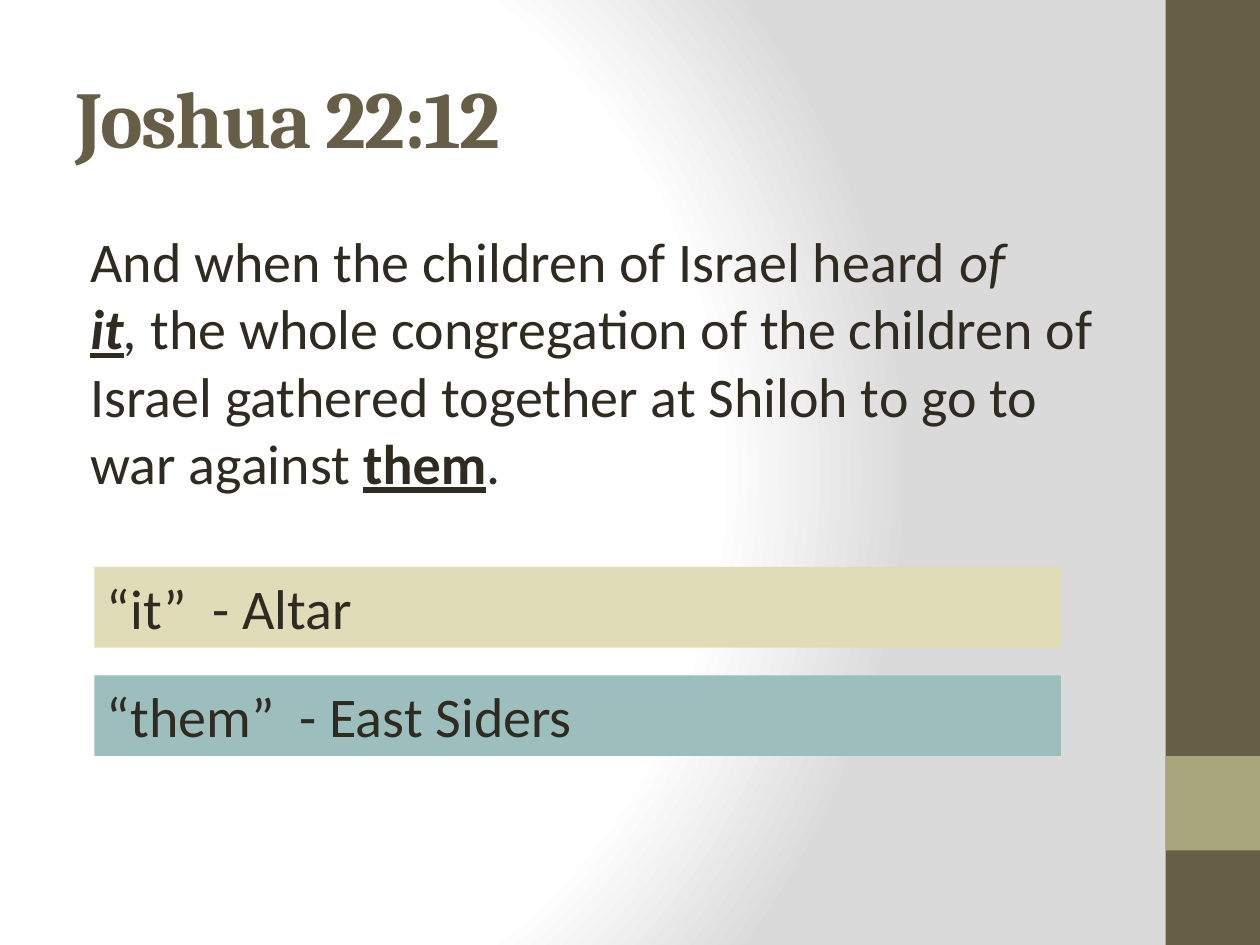
"""Build the Joshua 22:12 scripture slide."""
from dataclasses import dataclass

from pptx import Presentation
from pptx.dml.color import RGBColor
from pptx.enum.shapes import MSO_SHAPE as Preset
from pptx.enum.text import MSO_ANCHOR as Anchor, PP_ALIGN as Align
from pptx.oxml import parse_xml
from pptx.oxml.ns import nsdecls
from pptx.util import Inches, Pt

COLORS = {
    "brown": "675E47",
    "olive": "A9A57C",
    "ink": "2F2B20",
    "sand": "DFDCB7",
    "teal": "9CBEBD",
    "white": "FFFFFF",
    "gray": "DADADA",
}


@dataclass
class Span:
    """A stretch of text with its own emphasis."""
    text: str
    bold: bool = False
    italic: bool = False
    underline: bool = False


@dataclass
class Band:
    """A filled rectangle, measured in inches."""
    left: float
    top: float
    width: float
    height: float
    color: str
    text: str = ""


VERSE = [
    Span("And when the children of Israel heard\u00a0"),
    Span("of", italic=True),
    Span(" it", bold=True, italic=True, underline=True),
    Span(",", italic=True),
    Span("\u00a0the whole congregation of the children of Israel gathered "
         "together at Shiloh to go to war against "),
    Span("them", bold=True, underline=True),
    Span("."),
]
SIDEBAR = [
    Band(9.25, 0, 0.75, 7.5, "brown"),
    Band(9.25, 6, 0.75, 0.75, "olive"),
]
MEANINGS = [
    Band(0.75, 4.5, 7.67, 0.64, "sand", "“it”  - Altar"),
    Band(0.75, 5.36, 7.67, 0.64, "teal", "“them”  - East Siders"),
]


def write(box, spans: list[Span], *, size: float = 32, font: str = "Calibri",
          color: str = "ink", anchor=Anchor.TOP, indent: float = 0,
          tracking: int = 0) -> None:
    """Fill a box with one left-aligned paragraph of formatted spans."""
    frame = box.text_frame
    frame.word_wrap = True
    frame.vertical_anchor = anchor
    para = frame.paragraphs[0]
    para.alignment = Align.LEFT
    if indent:
        para._p.get_or_add_pPr().set("marL", str(Inches(indent)))
    for span in spans:
        run = para.add_run()
        run.text = span.text
        run.font.size = Pt(size)
        run.font.name = font
        run.font.bold = span.bold
        run.font.italic = span.italic
        run.font.underline = span.underline
        run.font.color.rgb = RGBColor.from_string(COLORS[color])
        if tracking:
            run.font._element.set("spc", str(tracking))


def add_band(page, band: Band) -> None:
    """Draw a flat rectangle and its text, if any."""
    box = page.shapes.add_shape(
        Preset.RECTANGLE, Inches(band.left), Inches(band.top),
        Inches(band.width), Inches(band.height))
    box.shadow.inherit = False
    box.fill.solid()
    box.fill.fore_color.rgb = RGBColor.from_string(COLORS[band.color])
    box.line.fill.background()
    if band.text:
        write(box, [Span(band.text)])


def add_text(page, top: float, height: float, spans: list[Span], **style) -> None:
    """Place a text box in the main column."""
    box = page.shapes.add_textbox(
        Inches(0.5), Inches(top), Inches(8.33), Inches(height))
    write(box, spans, **style)


def set_background(page) -> None:
    """Give the page a circular white-to-gray gradient."""
    stops = "".join(
        f'<a:gs pos="{place * 1000}"><a:srgbClr val="{COLORS[color]}"/></a:gs>'
        for place, color in ((0, "white"), (75, "white"), (100, "gray")))
    page.element.cSld.insert(0, parse_xml(
        f'<p:bg {nsdecls("p", "a")}><p:bgPr><a:gradFill rotWithShape="1">'
        f'<a:gsLst>{stops}</a:gsLst><a:path path="circle">'
        '<a:fillToRect l="20000" t="50000" r="100000" b="50000"/></a:path>'
        '</a:gradFill><a:effectLst/></p:bgPr></p:bg>'))


def main() -> None:
    """Compose and save the deck."""
    deck = Presentation()
    deck.slide_width, deck.slide_height = Inches(10), Inches(7.5)
    page = deck.slides.add_slide(deck.slide_layouts[6])
    set_background(page)
    for band in SIDEBAR:
        add_band(page, band)
    add_text(page, 0.3, 1.25, [Span("Joshua 22:12", bold=True)], size=46,
             font="Cambria", color="brown", anchor=Anchor.MIDDLE, tracking=-100)
    add_text(page, 1.75, 2.5, VERSE, indent=0.12)
    for band in MEANINGS:
        add_band(page, band)
    deck.save("out.pptx")


if __name__ == "__main__":
    main()
